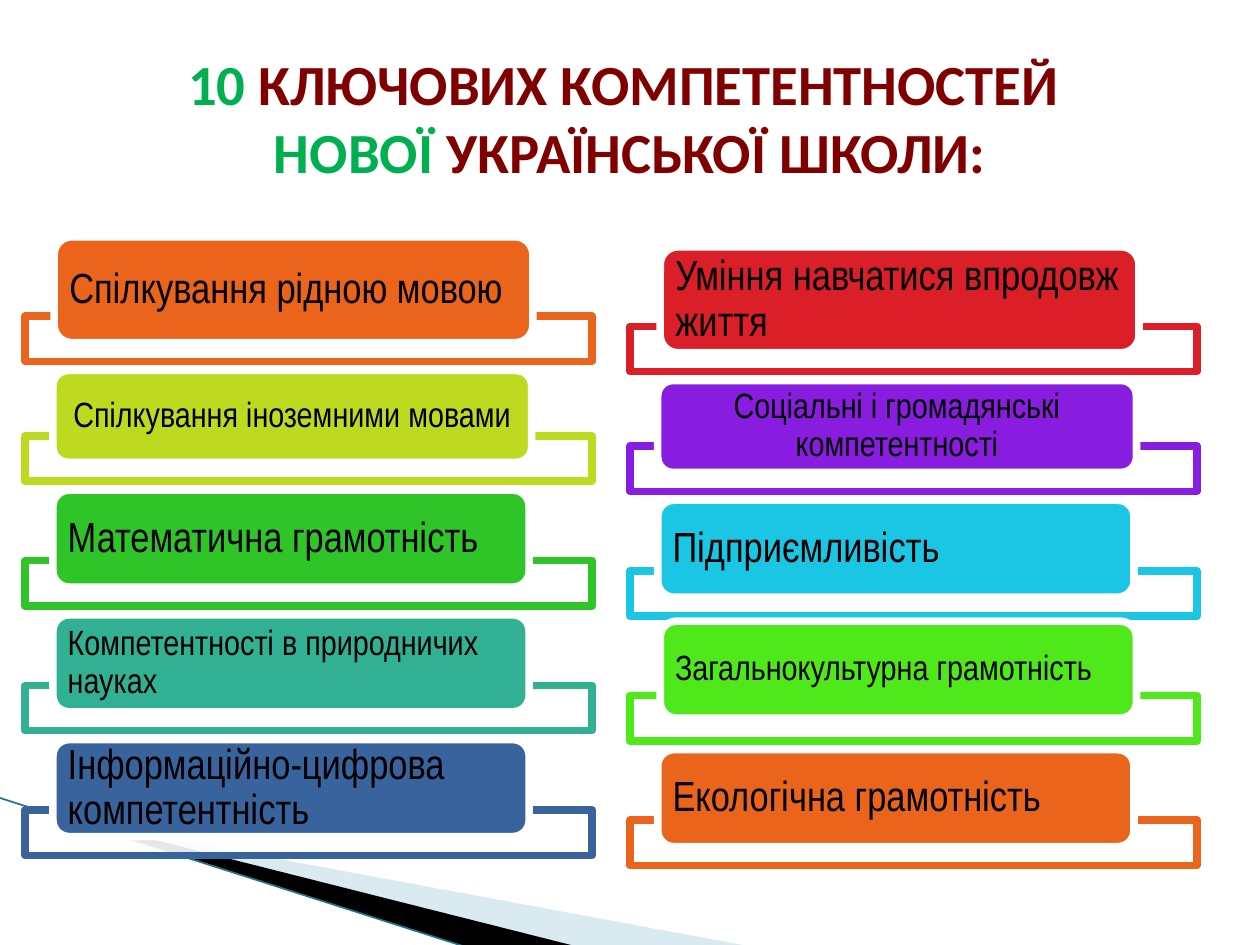
from lxml import etree
from pptx import Presentation
from pptx import util as u
from pptx.dml.color import RGBColor
from pptx.enum import shapes, text
from pptx.oxml import ns

WHITE = RGBColor(0xFF, 0xFF, 0xFF)
BLACK = RGBColor(0, 0, 0)
MAROON = RGBColor(0x80, 0, 0)
GREEN = RGBColor(0, 0xB0, 0x50)
PALE_BLUE = RGBColor(0xA0, 0xCB, 0xDC)
TEAL = RGBColor(0x1E, 0x76, 0x8C)
ORANGE = RGBColor(0xEB, 0x64, 0x1B)
OLIVE = RGBColor(0xBD, 0xDA, 0x20)
LEAF = RGBColor(0x2F, 0xC5, 0x29)
SEA = RGBColor(0x32, 0xB0, 0x94)
NAVY = RGBColor(0x39, 0x63, 0x9D)
RED = RGBColor(0xDA, 0x1F, 0x28)
VIOLET = RGBColor(0x88, 0x1D, 0xE0)
CYAN = RGBColor(0x1B, 0xC6, 0xE5)
LIME = RGBColor(0x4E, 0xE8, 0x1B)

# Row height and label width, shared by both columns
ROWS = [(0.84, 3.8), (0.73, 3.8), (0.77, 3.78), (0.77, 3.78), (0.77, 3.78)]
ROW_GAP = 0.22
TRAY_OVERLAP = 0.21

# Wording, colour, text size, centred, label shift (x, y)
LEFT_ITEMS = [
    ("Спілкування рідною мовою", ORANGE, 24, False, (0.01, 0)),
    ("Спілкування іноземними мовами", OLIVE, 20, True, (0, 0)),
    ("Математична грамотність", LEAF, 24, False, (0, 0)),
    ("Компетентності в природничих науках", SEA, 20, False, (0, 0)),
    ("Інформаційно-цифрова компетентність", NAVY, 24, False, (0, 0)),
]
RIGHT_ITEMS = [
    ("Уміння навчатися впродовж життя", RED, 24, False, (0.02, 0)),
    ("Соціальні і громадянські компетентності", VIOLET, 20, True, (0, 0)),
    ("Підприємливість", CYAN, 24, False, (0, 0)),
    ("Загальнокультурна грамотність", LIME, 20, False, (0.02, -0.03)),
    ("Екологічна грамотність", ORANGE, 24, False, (0, 0)),
]


def add_text(para, wording, *, font, size, color, bold=False):
    span = para.add_run()
    span.text = wording
    span.font.name = font
    span.font.size = u.Pt(size)
    span.font.bold = bold
    span.font.color.rgb = color


class SlideBuilder:
    label_font = "Arial Narrow"
    title_font = "Calibri"
    title_size = 32.4
    outline = u.Pt(4.33)

    def __init__(self, page):
        self.page = page

    def paint(self, shape, fill, line=None, opacity=100):
        shape.shadow.inherit = False
        shape.fill.solid()
        shape.fill.fore_color.rgb = fill
        if opacity < 100:
            color = shape.fill._xPr.find(".//" + ns.qn("a:srgbClr"))
            etree.SubElement(color, ns.qn("a:alpha"), val=str(opacity * 1000))
        if line is None:
            shape.line.fill.background()
        else:
            shape.line.color.rgb = line
            shape.line.width = self.outline

    def polygon(self, points, fill, opacity=100):
        corners = [(u.Inches(x), u.Inches(y)) for x, y in points]
        builder = self.page.shapes.build_freeform(*corners[0])
        builder.add_line_segments(corners[1:], close=True)
        self.paint(builder.convert_to_shape(), fill, opacity=opacity)

    def line(self, start, end, color, width):
        ends = [u.Inches(value) for value in (*start, *end)]
        connector = self.page.shapes.add_connector(
            shapes.MSO_CONNECTOR.STRAIGHT, *ends)
        connector.line.color.rgb = color
        connector.line.width = u.Pt(width)
        properties = connector._element.spPr
        etree.SubElement(properties, ns.qn("a:effectLst"))

    def box(self, kind, left, top, width, height, fill, line, opacity=100):
        shape = self.page.shapes.add_shape(
            kind, *(u.Inches(v) for v in (left, top, width, height)))
        self.paint(shape, fill, line, opacity)
        return shape

    def label(self, area, wording, color, size, centred):
        shape = self.box(shapes.MSO_SHAPE.ROUNDED_RECTANGLE, *area, color, WHITE)
        frame = shape.text_frame
        frame.word_wrap = True
        frame.vertical_anchor = text.MSO_ANCHOR.MIDDLE
        frame.margin_left = frame.margin_right = u.Inches(0.08)
        frame.margin_top = frame.margin_bottom = 0
        para = frame.paragraphs[0]
        para.alignment = text.PP_ALIGN.CENTER if centred else text.PP_ALIGN.LEFT
        para.line_spacing = 0.9
        add_text(para, wording, font=self.label_font, size=size, color=BLACK)

    def column(self, left, top, items):
        for (height, width), item in zip(ROWS, items):
            wording, color, size, centred, (shift_x, shift_y) = item
            self.box(shapes.MSO_SHAPE.RECTANGLE, left, top + height - TRAY_OVERLAP,
                     4.5, 0.36, WHITE, color, opacity=90)
            area = (left + 0.22 + shift_x, top + shift_y, width, height)
            self.label(area, wording, color, size, centred)
            top += height + ROW_GAP

    def title(self, lines):
        box = self.page.shapes.add_textbox(
            u.Inches(0.5), u.Inches(0.3), u.Inches(9), u.Inches(1.25))
        frame = box.text_frame
        frame.word_wrap = True
        frame.vertical_anchor = text.MSO_ANCHOR.MIDDLE
        para = frame.paragraphs[0]
        para.alignment = text.PP_ALIGN.CENTER
        for index, spans in enumerate(lines):
            if index:
                para.add_line_break()
            for wording, color in spans:
                add_text(para, wording, font=self.title_font,
                         size=self.title_size, color=color, bold=True)


def main():
    deck = Presentation()
    deck.slide_width, deck.slide_height = u.Inches(10), u.Inches(7.5)
    slide = SlideBuilder(deck.slides.add_slide(deck.slide_layouts[6]))

    # Corner decoration
    slide.polygon([(0.55, 6.51), (5.95, 7.51), (4.56, 7.51), (0.55, 6.5)],
                  PALE_BLUE, opacity=40)
    slide.polygon([(0.53, 6.49), (4.57, 7.51), (3.72, 7.52), (0.54, 6.5)], BLACK)
    slide.line((-0.01, 6.33), (3.71, 7.52), TEAL, 0.95)

    # Left competences, title, right competences
    slide.column(0.2, 1.88, LEFT_ITEMS)
    slide.title([
        [("10", GREEN), (" КЛЮЧОВИХ КОМПЕТЕНТНОСТЕЙ ", MAROON)],
        [("НОВОЇ ", GREEN), ("УКРАЇНСЬКОЇ ШКОЛИ:", MAROON)],
    ])
    slide.column(5, 1.96, RIGHT_ITEMS)

    deck.save("out.pptx")


if __name__ == "__main__":
    main()
